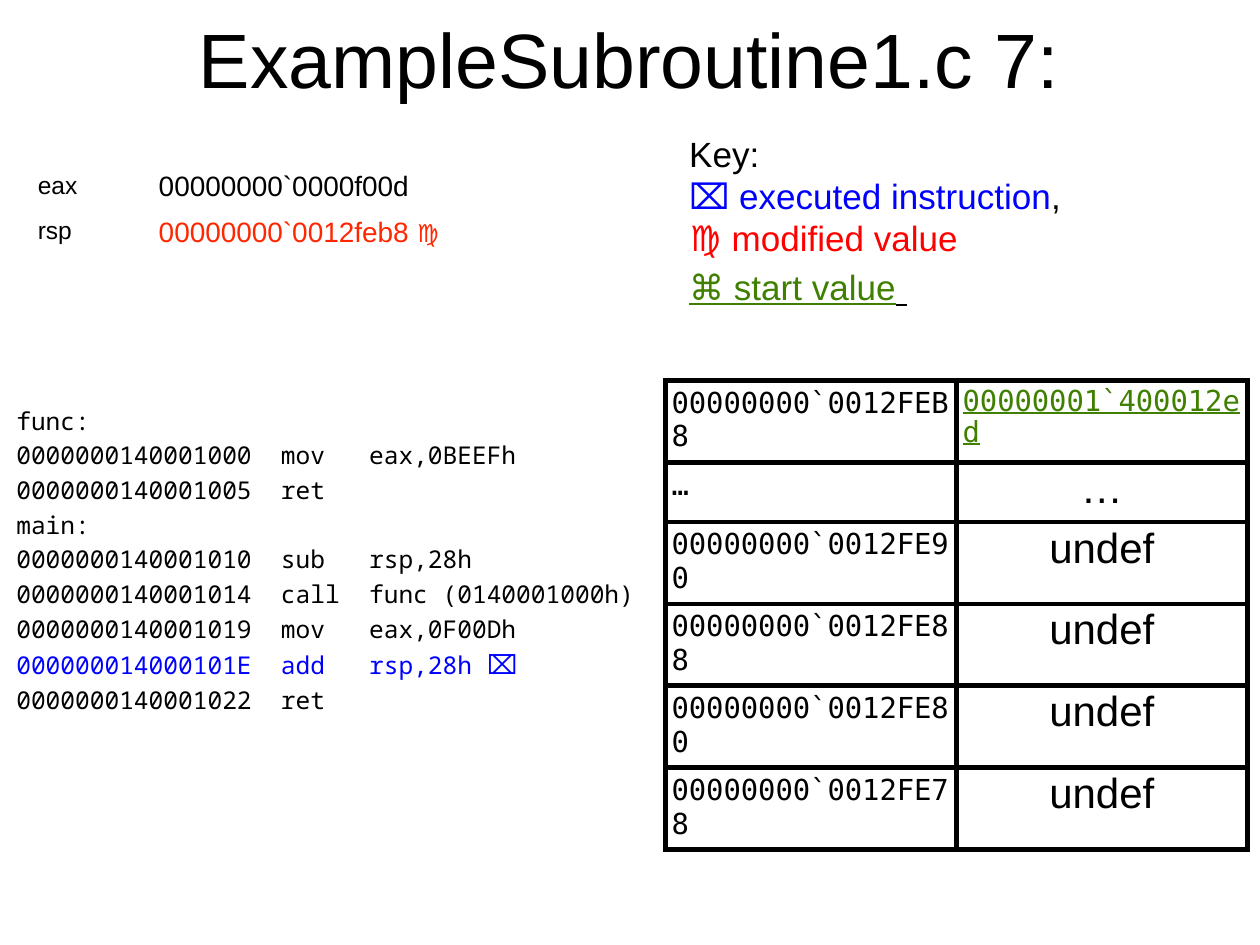
from lxml.etree import SubElement
from pptx import Presentation
from pptx.dml.color import RGBColor
from pptx.enum.text import MSO_ANCHOR, MSO_AUTO_SIZE, PP_ALIGN
from pptx.oxml.ns import qn
from pptx.util import Inches, Pt

BLACK = RGBColor(0x00, 0x00, 0x00)
BLUE = RGBColor(0x00, 0x00, 0xFF)
RED = RGBColor(0xFF, 0x00, 0x00)
ORANGE_RED = RGBColor(0xFF, 0x26, 0x00)
GREEN = RGBColor(0x40, 0x80, 0x00)

SANS = "Arial"
STACK_FONT = "DejaVu Sans Mono"
CODE_FONT = "Noto Sans Mono"

STACK = [
    ("00000000`0012FEB8", "00000001`400012ed"),
    ("…", "…"),
    ("00000000`0012FE90", "undef"),
    ("00000000`0012FE88", "undef"),
    ("00000000`0012FE80", "undef"),
    ("00000000`0012FE78", "undef"),
]
CODE = [
    "func:",
    "0000000140001000\tmov\teax,0BEEFh",
    "0000000140001005\tret",
    "main:",
    "0000000140001010\tsub\trsp,28h",
    "0000000140001014\tcall\tfunc (0140001000h)",
    "0000000140001019\tmov\teax,0F00Dh",
    "000000014000101E\tadd\trsp,28h ",
    "0000000140001022\tret",
]
EXECUTED_LINE = 7


def style_font(font, name, size, color=BLACK, underline=None):
    """Set the typeface, size, colour and underline of a font."""
    font.name = name
    font.size = Pt(size)
    font.color.rgb = color
    font.underline = underline


def add_span(para, text, *style):
    """Append a run with its own style."""
    span = para.add_run()
    span.text = text
    style_font(span.font, *style)


def set_margins(target, margin):
    """Give a cell or text frame equal margins."""
    target.margin_left = target.margin_right = margin
    target.margin_top = target.margin_bottom = margin


def add_text_box(page, left, top, width, height, wrap):
    """Add an empty text box and return its text frame."""
    frame = page.shapes.add_textbox(left, top, width, height).text_frame
    frame.word_wrap = wrap
    frame.auto_size = MSO_AUTO_SIZE.SHAPE_TO_FIT_TEXT
    set_margins(frame, Inches(0.05))
    return frame


def next_paragraph(frame, index):
    """Return the first paragraph, or add another."""
    return frame.add_paragraph() if index else frame.paragraphs[0]


def add_tab_stops(para, *positions):
    """Give a paragraph left-aligned tab stops."""
    stops = SubElement(para._p.get_or_add_pPr(), qn("a:tabLst"))
    for position in positions:
        SubElement(stops, qn("a:tab"), pos=str(position), algn="l")


def add_plain_table(page, left, top, widths, heights):
    """Add a table with no style bands and unfilled cells."""
    table = page.shapes.add_table(
        len(heights), len(widths), left, top, sum(widths), sum(heights)
    ).table
    table.first_row = table.horz_banding = False
    for column, width in zip(table.columns, widths):
        column.width = width
    for row, height in zip(table.rows, heights):
        row.height = height
    for cell in table.iter_cells():
        cell.fill.background()
        set_margins(cell, Inches(0.05))
    return table


def add_borders(cell):
    """Draw black three-point lines around a cell."""
    properties = cell._tc.get_or_add_tcPr()
    for index, side in enumerate(("a:lnL", "a:lnR", "a:lnT", "a:lnB")):
        line = properties.makeelement(qn(side), {"w": str(Pt(3))})
        fill = SubElement(line, qn("a:solidFill"))
        SubElement(fill, qn("a:srgbClr"), val=str(BLACK))
        properties.insert(index, line)


def space_paragraph(para, before):
    """Apply the tight line spacing used in value cells."""
    para.line_spacing = 0.93
    para.space_before = Pt(before)


def fill_title(page):
    """Place and format the slide title."""
    title = page.shapes.title
    title.left, title.top = Inches(-0.03), Inches(0.07)
    title.width, title.height = Inches(10.05), Inches(0.77)
    frame = title.text_frame
    frame.text = "ExampleSubroutine1.c 7:"
    frame.vertical_anchor = MSO_ANCHOR.MIDDLE
    frame.auto_size = MSO_AUTO_SIZE.SHAPE_TO_FIT_TEXT
    set_margins(frame, 0)
    para = frame.paragraphs[0]
    para.alignment = PP_ALIGN.CENTER
    style_font(para.font, SANS, 44)


def add_stack(page):
    """Add the table of stack addresses and values."""
    heights = [Inches(0.44)] * 2 + [Inches(0.51)] * 4
    table = add_plain_table(page, Inches(5.28), Inches(3.02), [Inches(2.31)] * 2, heights)
    for row, (address, value) in enumerate(STACK):
        address_cell, value_cell = table.cell(row, 0), table.cell(row, 1)
        address_cell.text, value_cell.text = address, value
        style_font(address_cell.text_frame.paragraphs[0].font, STACK_FONT, 16.5)
        para = value_cell.text_frame.paragraphs[0]
        if row == 0:
            space_paragraph(para, 5)
            style_font(para.font, STACK_FONT, 16.5, GREEN, True)
        else:
            space_paragraph(para, 6)
            para.alignment = PP_ALIGN.CENTER
            style_font(para.font, SANS, 24)
    for cell in table.iter_cells():
        add_borders(cell)


def add_registers(page):
    """Add the register names and values."""
    table = add_plain_table(
        page, Inches(0.25), Inches(1.33), [Inches(0.96), Inches(2.48)], [Inches(0.36)] * 2
    )
    cells = [
        [("eax", SANS, 14)],
        [("00000000`0000f00d", SANS, 16)],
        [("rsp", SANS, 14)],
        [("00000000`0012feb8 ", SANS, 16, ORANGE_RED), ("♍", SANS, 14, ORANGE_RED)],
    ]
    for cell, spans in zip(table.iter_cells(), cells):
        para = cell.text_frame.paragraphs[0]
        space_paragraph(para, 3)
        for span in spans:
            add_span(para, *span)


def add_key(page):
    """Add the key to the symbols and colours."""
    frame = add_text_box(page, Inches(5.42), Inches(1), Inches(3.62), Inches(1.54), False)
    lines = [
        [("Key:", SANS, 20)],
        [("⌧ executed instruction", SANS, 20, BLUE), (",", SANS, 20)],
        [("♍ modified value", SANS, 20, RED)],
        [("⌘ start value", SANS, 20, GREEN, True), (" ", SANS, 24, BLACK, True)],
    ]
    for index, spans in enumerate(lines):
        para = next_paragraph(frame, index)
        for span in spans:
            add_span(para, *span)


def add_code(page):
    """Add the disassembly listing with the executed line marked."""
    frame = add_text_box(page, Inches(0.08), Inches(3.17), Inches(5.17), Inches(2.8), True)
    for index, line in enumerate(CODE):
        executed = index == EXECUTED_LINE
        para = next_paragraph(frame, index)
        para.space_before = Pt(3)
        add_tab_stops(para, Inches(2.1), Inches(2.8))
        add_span(para, line, CODE_FONT, 14, BLUE if executed else BLACK)
        if executed:
            add_span(para, "⌧", SANS, 15, BLUE)


def main():
    """Build and save the slide."""
    deck = Presentation()
    deck.slide_width, deck.slide_height = Inches(10), Inches(7.5)
    page = deck.slides.add_slide(deck.slide_layouts[5])
    fill_title(page)
    add_stack(page)
    add_registers(page)
    add_key(page)
    add_code(page)
    deck.save("out.pptx")


if __name__ == "__main__":
    main()
